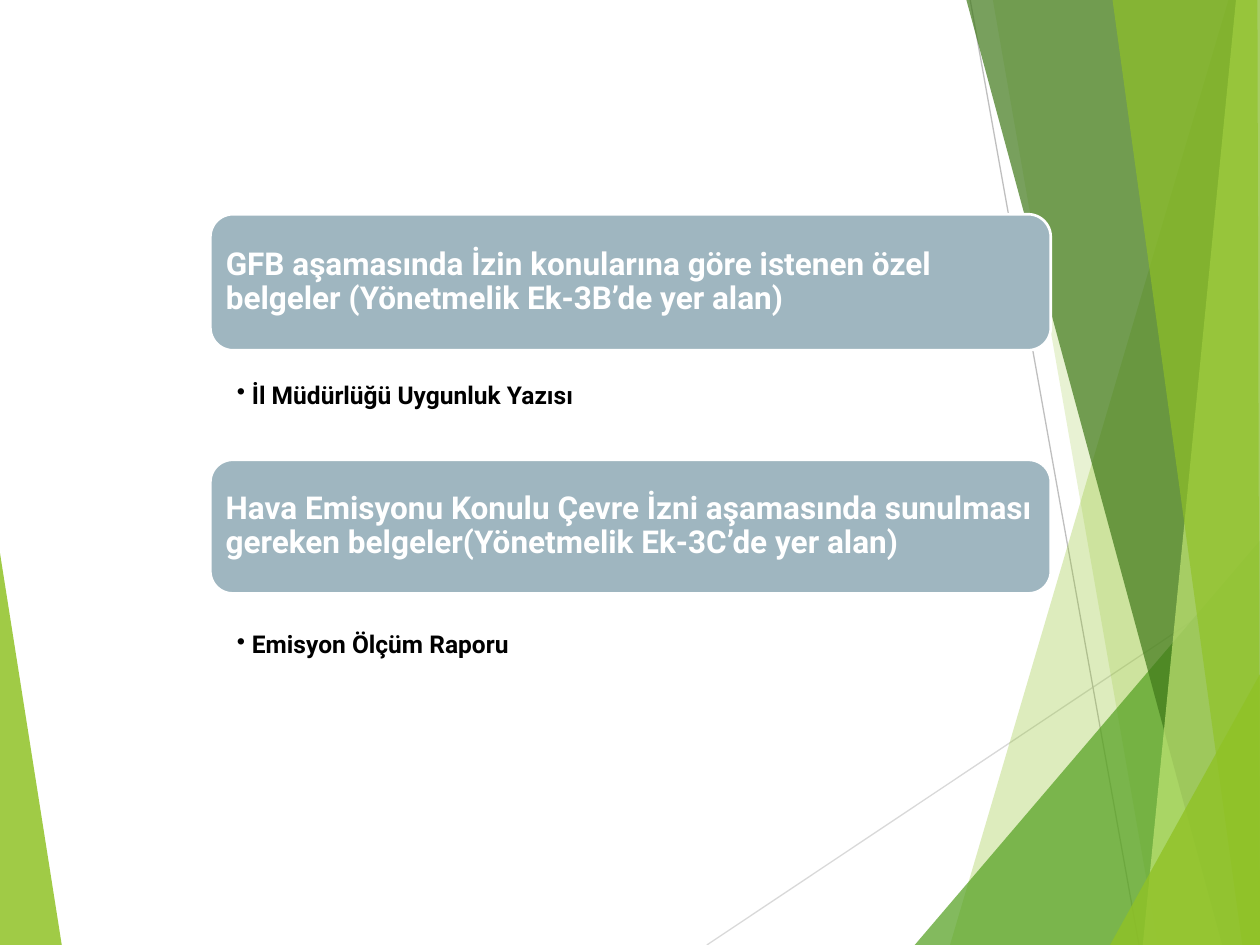
from lxml.etree import SubElement
from pptx import Presentation
from pptx.dml.color import RGBColor
from pptx.enum.shapes import MSO_CONNECTOR, MSO_SHAPE
from pptx.enum.text import MSO_ANCHOR, PP_ALIGN
from pptx.oxml.ns import qn
from pptx.util import Inches, Pt

FONT = "Roboto"
LEFT, WIDTH = 1.67, 6.67

LEFT_WEDGE = ([(0, 4.39), (0.49, 7.5), (0, 7.5)], "90C226", 85)
THIN_LINES = [
    ((5.61, 7.5), (10, 4.57), "D9D9D9"),
    ((7.7, 0), (9.04, 7.5), "BFBFBF"),
]
RIGHT_FACETS = [
    ([(9.75, 0), (7.54, 7.5), (10, 7.5), (10, 0)], "90C226", 30),
    ([(7.88, 0), (9.19, 7.5), (10, 7.5), (10, 0)], "90C226", 20),
    ([(7.26, 7.5), (10, 4.29), (10, 7.5)], "54A021", 72),
    ([(7.67, 0), (9.7, 7.5), (10, 7.5), (10, 0)], "3F7819", 70),
    ([(9.81, 0), (9.07, 7.5), (10, 7.5), (10, 0)], "C0E474", 70),
    ([(8.83, 0), (9.86, 7.5), (10, 7.5), (9.98, 0)], "90C226", 65),
    ([(8.81, 7.5), (10, 5.35), (10, 7.5)], "90C226", 80),
]
SECTIONS = [
    (1.7, 1.08, "GFB aşamasında İzin konularına göre istenen özel belgeler "
     "(Yönetmelik Ek-3B’de yer alan)",
     3.01, 1.15, "İl Müdürlüğü Uygunluk Yazısı"),
    (3.65, 1.06, "Hava Emisyonu Konulu Çevre İzni aşamasında sunulması gereken "
     "belgeler(Yönetmelik Ek-3C’de yer alan)",
     4.99, 0.81, "Emisyon Ölçüm Raporu"),
]


def color(value):
    return RGBColor.from_string(value)


def add_facet(slide, points, fill, opacity):
    corners = [(Inches(x), Inches(y)) for x, y in points]
    builder = slide.shapes.build_freeform(*corners[0])
    builder.add_line_segments(corners[1:], close=True)
    shape = builder.convert_to_shape()
    shape.shadow.inherit = False
    shape.fill.solid()
    shape.fill.fore_color.rgb = color(fill)
    shape.line.fill.background()
    fill_element = shape._element.spPr.find(qn("a:solidFill"))
    SubElement(fill_element[0], qn("a:alpha"), val=str(opacity * 1000))


def add_thin_line(slide, start, end, stroke):
    points = [Inches(value) for value in (*start, *end)]
    line = slide.shapes.add_connector(MSO_CONNECTOR.STRAIGHT, *points)
    line.line.color.rgb = color(stroke)
    line.line.width = Pt(0.75)
    SubElement(line._element.spPr, qn("a:effectLst"))


def set_margins(frame, left, top, right, bottom):
    frame.word_wrap = True
    frame.margin_left = Inches(left)
    frame.margin_top = Inches(top)
    frame.margin_right = Inches(right)
    frame.margin_bottom = Inches(bottom)


def write_text(paragraph, text, size, text_color):
    paragraph.alignment = PP_ALIGN.LEFT
    paragraph.line_spacing = 0.9
    run = paragraph.add_run()
    run.text = text
    run.font.name = FONT
    run.font.size = Pt(size)
    run.font.bold = True
    run.font.color.rgb = color(text_color)


def add_heading(slide, top, height, text):
    shape = slide.shapes.add_shape(
        MSO_SHAPE.ROUNDED_RECTANGLE,
        Inches(LEFT), Inches(top), Inches(WIDTH), Inches(height))
    shape.shadow.inherit = False
    shape.fill.solid()
    shape.fill.fore_color.rgb = color("9FB6C0")
    shape.line.color.rgb = color("FFFFFF")
    shape.line.width = Pt(1.5)
    frame = shape.text_frame
    set_margins(frame, 0.07, 0.07, 0.07, 0.07)
    frame.vertical_anchor = MSO_ANCHOR.MIDDLE
    write_text(frame.paragraphs[0], text, 18, "FFFFFF")


def add_bullet(slide, top, height, text):
    box = slide.shapes.add_textbox(
        Inches(LEFT), Inches(top), Inches(WIDTH), Inches(height))
    frame = box.text_frame
    set_margins(frame, 0.21, 0.03, 0.14, 0.03)
    paragraph = frame.paragraphs[0]
    paragraph.level = 1
    properties = paragraph._p.get_or_add_pPr()
    properties.set("marL", str(Inches(0.12)))
    properties.set("indent", str(Inches(-0.12)))
    SubElement(properties, qn("a:buChar"), char="•")
    write_text(paragraph, text, 14, "000000")


def main():
    presentation = Presentation()
    presentation.slide_width = Inches(10)
    presentation.slide_height = Inches(7.5)
    slide = presentation.slides.add_slide(presentation.slide_layouts[6])
    add_facet(slide, *LEFT_WEDGE)
    for line in THIN_LINES:
        add_thin_line(slide, *line)
    for facet in RIGHT_FACETS:
        add_facet(slide, *facet)
    for top, height, heading, item_top, item_height, item in SECTIONS:
        add_heading(slide, top, height, heading)
        add_bullet(slide, item_top, item_height, item)
    presentation.save("out.pptx")


if __name__ == "__main__":
    main()
